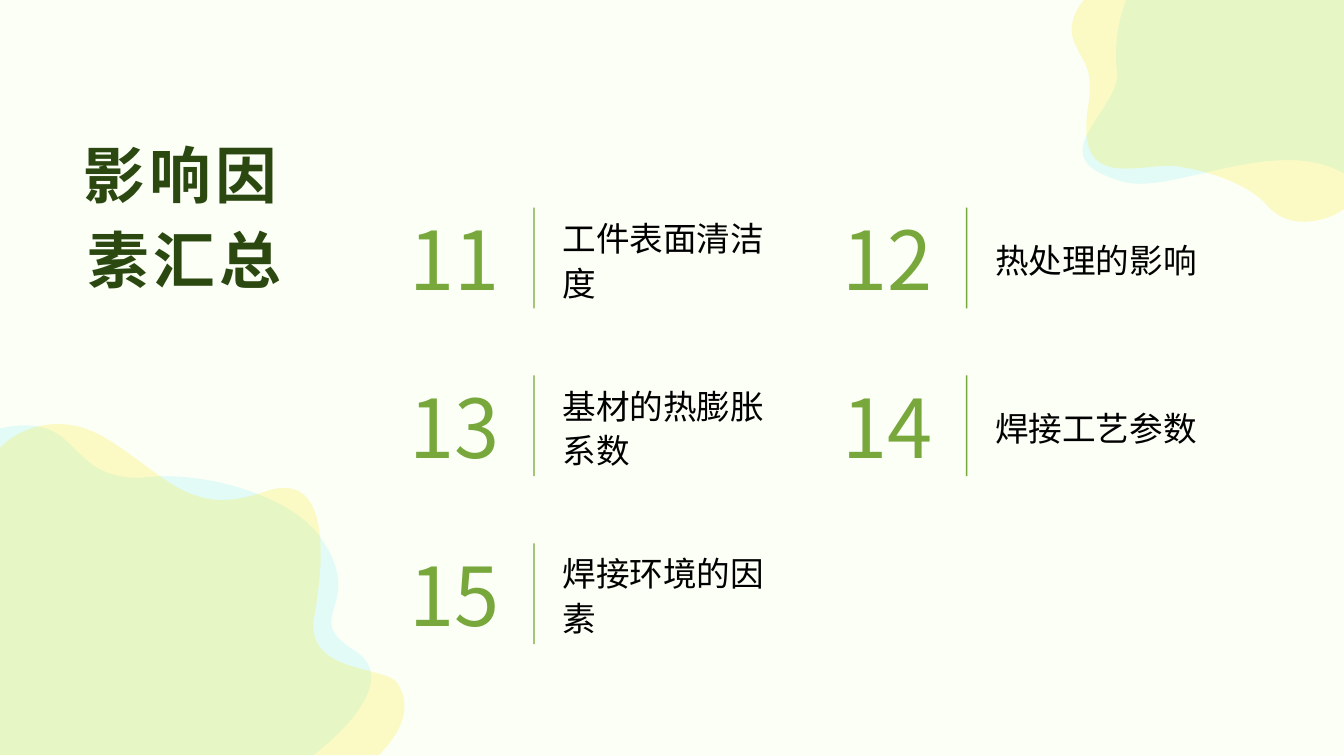
from dataclasses import dataclass

from lxml import etree
from pptx import Presentation
from pptx.dml.color import RGBColor as RGB
from pptx.enum.shapes import MSO_SHAPE as SHAPE
from pptx.enum.text import MSO_ANCHOR as ANCHOR, MSO_AUTO_SIZE as AUTOSIZE, PP_ALIGN as ALIGN
from pptx.oxml.ns import qn
from pptx.util import Inches, Pt


@dataclass(frozen=True)
class Theme:
    font: str = "Noto Sans CJK SC"
    paper: str = "FBFFF6"
    title: str = "2B4810"
    accent: str = "78A73B"
    text: str = "000000"
    aqua: str = "80EFFF"
    yellow: str = "FEE600"
    blob_alpha: int = 20
    title_size: int = 44
    number_size: int = 58
    label_size: int = 24


@dataclass(frozen=True)
class Box:
    x: float
    y: float
    w: float
    h: float

    def emu(self):
        return [Inches(v) for v in (self.x, self.y, self.w, self.h)]


THEME = Theme()
WIDTH, HEIGHT = 13.33, 7.5
TITLE_BOX = Box(0.32, 1.26, 2.47, 0.83)
GRID_BOX = Box(3.93, 1.99, 8.07, 4.39)
ITEM_W, ITEM_H = 3.78, 1.06
COLUMNS, ROWS = 2, 3
RULE_WIDTH = 1 / 72
FIRST_NUMBER = 11
FACTORS = ["工件表面清洁度", "热处理的影响", "基材的热膨胀系数", "焊接工艺参数", "焊接环境的因素"]

# Each blob: colour, box, start point, then line ends (2 values) or cubic curves (6 values)
BLOBS = [
    (THEME.aqua, Box(0, 4.22, 3.68, 3.27), (3.17, 5.32), [
        (2.87, 4.9, 1.97, 4.66, 1.41, 4.74), (0.62, 4.76, 0.84, 4.07, 0, 4.25),
        (0, 7.49), (3.11, 7.49),
        (3.11, 7.49, 4.06, 6.79, 3.51, 6.45), (2.96, 6.11, 3.66, 6.01, 3.17, 5.32)]),
    (THEME.yellow, Box(0, 4.21, 4.01, 3.28), (1.07, 4.36), [
        (0.58, 4.05, 0.15, 4.28, 0, 4.44), (0, 7.49), (3.76, 7.49),
        (3.84, 7.4, 4.14, 7.11, 3.95, 6.79), (3.86, 6.6, 3.06, 6.7, 3.11, 6.16),
        (3.36, 4.77, 2.89, 4.79, 2.65, 4.87), (1.9, 5.14, 1.69, 4.75, 1.07, 4.36)]),
    (THEME.aqua, Box(10.74, 0, 2.6, 1.82), (WIDTH, 0), [
        (WIDTH, 1.72), (12.93, 1.49, 12.39, 1.61, 11.93, 1.72),
        (11.61, 1.79, 11.33, 1.86, 11.13, 1.8), (10.56, 1.64, 10.73, 1.4, 10.9, 1.14),
        (10.99, 1, 11.09, 0.86, 11.08, 0.72), (11.03, 0.32, 11.17, 0, 11.17, 0),
        (WIDTH, 0)]),
    (THEME.yellow, Box(10.62, 0, 2.71, 2.2), (WIDTH, 0), [
        (WIDTH, 2.07), (13.22, 2.17, 12.81, 2.32, 12.57, 2.04),
        (12.41, 1.85, 12.03, 1.7, 11.67, 1.65), (11.58, 1.64, 11.48, 1.65, 11.38, 1.66),
        (11.04, 1.69, 10.67, 1.73, 10.8, 1.01), (10.83, 0.72, 10.77, 0.64, 10.72, 0.55),
        (10.7, 0.52, 10.69, 0.5, 10.68, 0.47), (10.55, 0.26, 10.7, 0.06, 10.75, 0),
        (WIDTH, 0)]),
]


def paint(sp, color):
    sp.shadow.inherit = False
    sp.fill.solid()
    sp.fill.fore_color.rgb = RGB.from_string(color)
    sp.line.fill.background()


def add_blob(slide, color, box, start, segments):
    builder = slide.shapes.build_freeform(*map(Inches, start))
    builder.add_line_segments([[Inches(v) for v in seg[-2:]] for seg in segments], close=True)
    sp = builder.convert_to_shape()
    sp.left, sp.top, sp.width, sp.height = box.emu()
    # Redraw the outline with real curves, relative to the box
    outline = sp.element.find(".//" + qn("a:path"))
    outline.set("w", str(sp.width))
    outline.set("h", str(sp.height))
    for node in list(outline):
        outline.remove(node)
    for i, seg in enumerate([start, *segments]):
        tag = "a:moveTo" if i == 0 else "a:lnTo" if len(seg) == 2 else "a:cubicBezTo"
        node = etree.SubElement(outline, qn(tag))
        for x, y in zip(seg[::2], seg[1::2]):
            etree.SubElement(node, qn("a:pt"), x=str(Inches(x - box.x)),
                             y=str(Inches(y - box.y)))
    etree.SubElement(outline, qn("a:close"))
    paint(sp, color)
    tint = sp.element.spPr.find(qn("a:solidFill"))[0]
    etree.SubElement(tint, qn("a:alpha"), val=str(THEME.blob_alpha * 1000))


def add_backdrop(slide, box):
    paint(slide.shapes.add_shape(SHAPE.RECTANGLE, *box.emu()), THEME.paper)
    for blob in BLOBS:
        add_blob(slide, *blob)


def write(sp, text, size, color, align, anchor, spacing, bold=False):
    tf = sp.text_frame
    tf.text = text
    tf.word_wrap = True
    tf.auto_size = AUTOSIZE.NONE
    tf.vertical_anchor = anchor
    tf.margin_left = tf.margin_right = tf.margin_top = tf.margin_bottom = 0
    p = tf.paragraphs[0]
    p.alignment = align
    p.line_spacing = spacing
    p.space_before = Pt(0)
    r = p.runs[0]
    r.font.size = Pt(size)
    r.font.bold = bold
    r.font.name = THEME.font
    r.font.color.rgb = RGB.from_string(color)
    r.font._element.find(qn("a:latin")).addnext(
        etree.Element(qn("a:ea"), typeface=THEME.font))
    return r


def add_title(slide, box):
    title = slide.shapes.title
    title.left, title.top, title.width, title.height = box.emu()
    r = write(title, "影响因素汇总", THEME.title_size, THEME.title, ALIGN.RIGHT,
              ANCHOR.TOP, 1.14, bold=True)
    r.font._element.set("spc", "300")
    slide.shapes._spTree.append(title.element)  # above the backdrop


def add_factor(slide, box, number, label):
    shapes = slide.shapes.add_group_shape().shapes
    rule_y, rule_h = box.y + 0.07, 1
    # Number
    sp = shapes.add_textbox(*Box(box.x, box.y, 1.16, box.h).emu())
    write(sp, str(number), THEME.number_size, THEME.accent, ALIGN.CENTER, ANCHOR.MIDDLE, 1.09)
    # Divider
    rule = shapes.add_shape(SHAPE.RECTANGLE,
                            *Box(box.x + 1.36, rule_y, RULE_WIDTH, rule_h).emu())
    paint(rule, THEME.accent)
    # Label
    sp = shapes.add_textbox(*Box(box.x + 1.65, rule_y, 2.13, rule_h).emu())
    write(sp, label, THEME.label_size, THEME.text, ALIGN.LEFT, ANCHOR.MIDDLE, 1.11)


def add_factor_grid(slide, box):
    column_pitch = (box.w - ITEM_W) / (COLUMNS - 1)
    row_pitch = (box.h - ITEM_H) / (ROWS - 1)
    for i, label in enumerate(FACTORS):
        row, col = divmod(i, COLUMNS)
        cell = Box(box.x + col * column_pitch, box.y + row * row_pitch, ITEM_W, ITEM_H)
        add_factor(slide, cell, FIRST_NUMBER + i, label)


def main():
    prs = Presentation()
    prs.slide_width, prs.slide_height = Inches(WIDTH), Inches(HEIGHT)
    slide = prs.slides.add_slide(prs.slide_layouts[5])
    add_backdrop(slide, Box(0, 0, WIDTH, HEIGHT))
    add_title(slide, TITLE_BOX)
    add_factor_grid(slide, GRID_BOX)
    prs.save("out.pptx")


if __name__ == "__main__":
    main()
